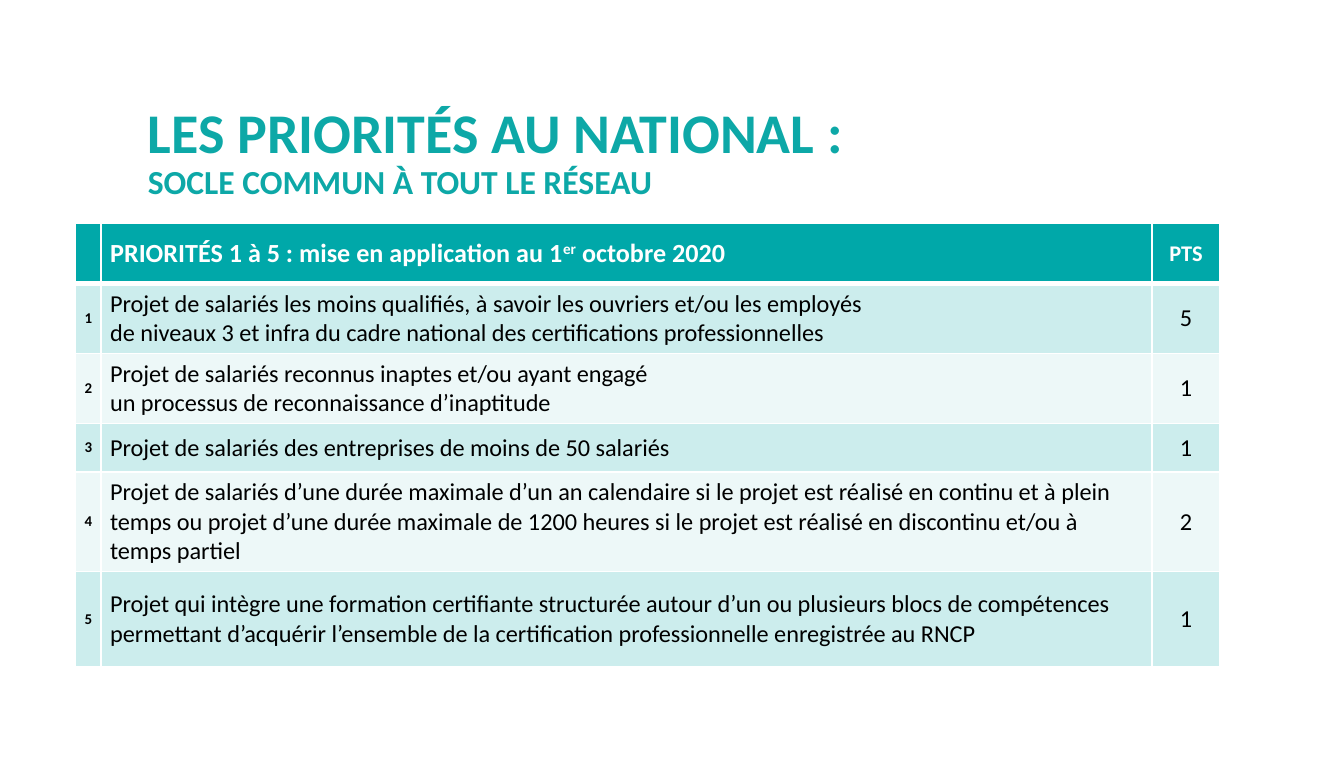
from dataclasses import dataclass

from lxml import etree
from pptx import Presentation
from pptx.dml.color import RGBColor
from pptx.enum.text import MSO_ANCHOR, PP_ALIGN
from pptx.oxml.ns import qn
from pptx.util import Inches, Pt

WIDTH, HEIGHT = 10, 5.63
FONT = "Calibri"
TEAL = RGBColor(0x00, 0xA8, 0xA9)
TITLE_TEAL = RGBColor(0x0D, 0xA8, 0xA7)
WHITE = RGBColor(0xFF, 0xFF, 0xFF)
BLACK = RGBColor(0x00, 0x00, 0x00)
LEFT, CENTER = PP_ALIGN.LEFT, PP_ALIGN.CENTER
TOP, MIDDLE = MSO_ANCHOR.TOP, MSO_ANCHOR.MIDDLE
PAD_X, PAD_Y = Inches(0.07), Inches(0.04)


@dataclass
class Priority:
    lines: list[str]
    points: int
    height: float  # percent of slide height


@dataclass
class Style:
    size: float
    color: RGBColor
    bold: bool = False
    align: PP_ALIGN = LEFT


PRIORITIES = [
    Priority(["Projet de salariés les moins qualifiés, à savoir les ouvriers et/ou les employés",
              "de niveaux 3 et infra du cadre national des certifications professionnelles"], 5, 9.24),
    Priority(["Projet de salariés reconnus inaptes et/ou ayant engagé",
              "un processus de reconnaissance d’inaptitude"], 1, 9.24),
    Priority(["Projet de salariés des entreprises de moins de 50 salariés"], 1, 6.4),
    Priority(["Projet de salariés d’une durée maximale d’un an calendaire si le projet est "
              "réalisé en continu et à plein temps ou projet d’une durée maximale de 1200 heures "
              "si le projet est réalisé en discontinu et/ou à temps partiel"], 2, 12.61),
    Priority(["Projet qui intègre une formation certifiante structurée autour d’un ou plusieurs "
              "blocs de compétences permettant d’acquérir l’ensemble de la certification "
              "professionnelle enregistrée au RNCP"], 1, 12.61),
]
HEADER_HEIGHT = 8
COLUMNS = [1.9, 78.2, 5.1]  # percent of slide width

HEADER = Style(14, WHITE, True)
HEADER_POINTS = Style(12, WHITE, True, CENTER)
NUMBER = Style(8, BLACK, True, CENTER)
BODY = Style(13, BLACK)
POINTS = Style(13, BLACK, False, CENTER)


def x(percent: float) -> int:
    return Inches(WIDTH * percent / 100)


def y(percent: float) -> int:
    return Inches(HEIGHT * percent / 100)


def style_paragraph(p, style: Style) -> None:
    p.alignment = style.align
    p.font.name, p.font.size, p.font.bold = FONT, Pt(style.size), style.bold
    p.font.color.rgb = style.color


def write(tf, lines: list[str], style: Style) -> None:
    for i, line in enumerate(lines):
        p = tf.paragraphs[0] if i == 0 else tf.add_paragraph()
        p.add_run().text = line
        style_paragraph(p, style)


def format_cell(cell, opacity: int, top: float = 1, bottom: float = 1) -> None:
    """Fill a cell with teal of a given opacity and give it white borders."""
    cell.vertical_anchor = MIDDLE
    cell.margin_left = cell.margin_right = PAD_X
    cell.margin_top = cell.margin_bottom = PAD_Y
    cell.fill.solid()
    cell.fill.fore_color.rgb = TEAL
    tc_pr = cell._tc.get_or_add_tcPr()
    if opacity < 100:
        color = tc_pr.find(f".//{qn('a:srgbClr')}")
        etree.SubElement(color, qn("a:alpha"), val=str(opacity * 1000))
    sides = [("L", 1), ("R", 1), ("T", top), ("B", bottom)]
    for i, (side, width) in enumerate(sides):
        line = etree.Element(qn(f"a:ln{side}"), w=str(Pt(width)))
        fill = etree.SubElement(line, qn("a:solidFill"))
        etree.SubElement(fill, qn("a:srgbClr"), val=str(WHITE))
        tc_pr.insert(i, line)


def add_title(s) -> None:
    tf = s.shapes.add_textbox(x(10.3), y(13.14), x(76), y(11.9)).text_frame
    tf.word_wrap = True
    tf.vertical_anchor = TOP
    tf.margin_left = tf.margin_right = PAD_X
    tf.margin_top = tf.margin_bottom = PAD_Y
    write(tf, ["LES PRIORITÉS AU NATIONAL :", "SOCLE COMMUN À TOUT LE RÉSEAU"],
          Style(30, TITLE_TEAL, True))
    tf.paragraphs[1].font.size = Pt(18)
    for p in tf.paragraphs:
        p.line_spacing = 0.9


def add_priorities(s) -> None:
    heights = [HEADER_HEIGHT] + [row.height for row in PRIORITIES]
    table = s.shapes.add_table(len(heights), len(COLUMNS), x(5.6), y(29.48),
                               x(sum(COLUMNS)), y(sum(heights))).table
    for column, width in zip(table.columns, COLUMNS):
        column.width = x(width)
    for row, height in zip(table.rows, heights):
        row.height = y(height)

    # Header row, with a raised ordinal ending
    for cell in table.rows[0].cells:
        format_cell(cell, 100, bottom=3)
    p = table.cell(0, 1).text_frame.paragraphs[0]
    for text in ("PRIORITÉS 1 à 5 : mise en application au 1", "er", " octobre 2020"):
        r = p.add_run()
        r.text = text
        if text == "er":
            r.font._element.set("baseline", "30000")
    style_paragraph(p, HEADER)
    write(table.cell(0, 2).text_frame, ["PTS"], HEADER_POINTS)

    # Banded rows
    for i, priority in enumerate(PRIORITIES, 1):
        contents = [([str(i)], NUMBER), (priority.lines, BODY), ([str(priority.points)], POINTS)]
        for cell, (lines, style) in zip(table.rows[i].cells, contents):
            format_cell(cell, 20 if i % 2 else 7, top=3 if i == 1 else 1)
            write(cell.text_frame, lines, style)


def main() -> None:
    prs = Presentation()
    prs.slide_width, prs.slide_height = Inches(WIDTH), Inches(HEIGHT)
    s = prs.slides.add_slide(prs.slide_layouts[6])
    add_priorities(s)
    add_title(s)
    prs.save("out.pptx")


if __name__ == "__main__":
    main()
